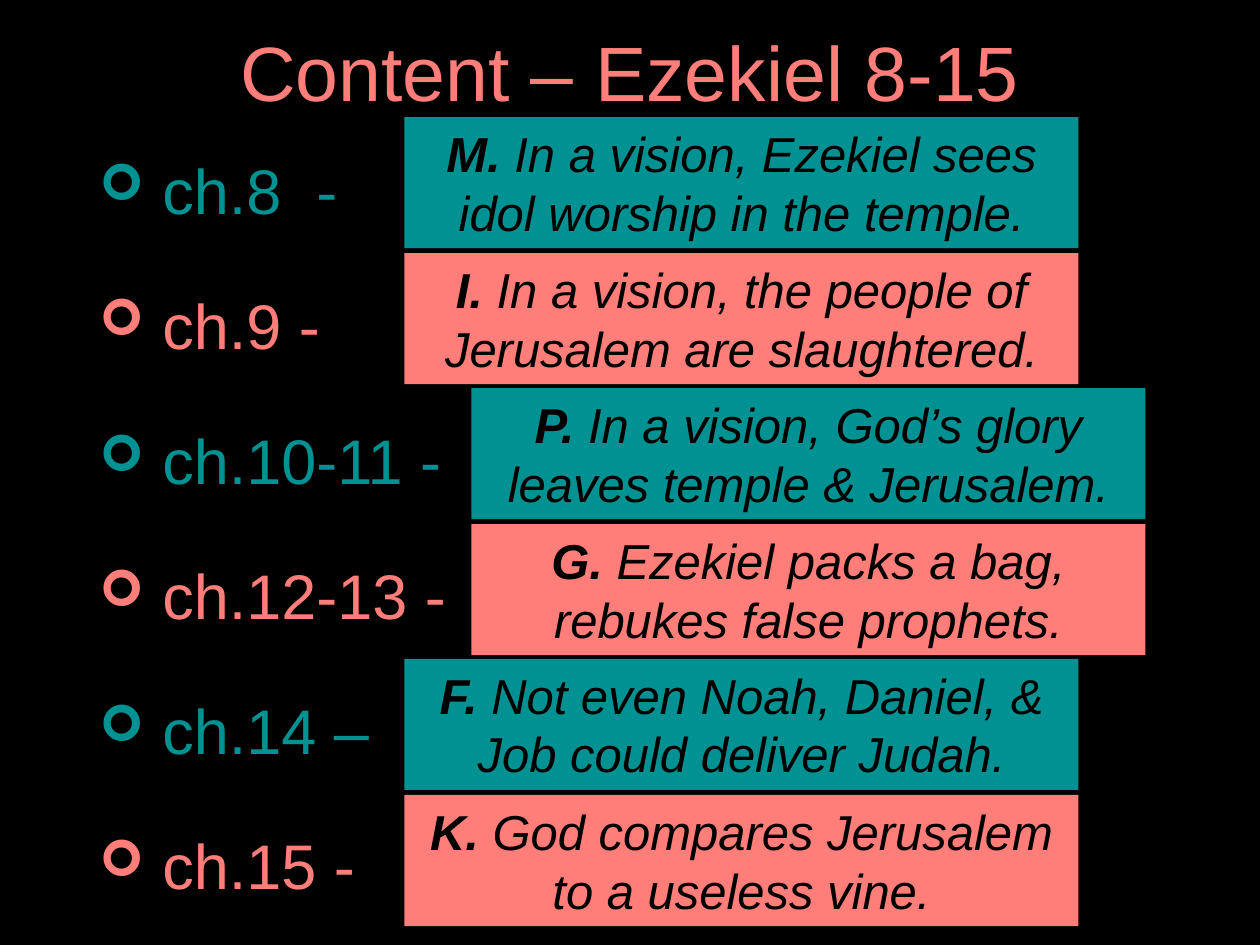
from lxml import etree
from pptx import Presentation
from pptx import util as u
from pptx.dml.color import RGBColor
from pptx.enum import shapes, text
from pptx.oxml.ns import qn

PX = 9144  # EMU per px, 100 px to the inch
BLACK = RGBColor(0x00, 0x00, 0x00)
TEAL = RGBColor(0x00, 0x91, 0x93)
CORAL = RGBColor(0xFF, 0x7E, 0x79)

CHAPTERS = [
    ("ch.8  -", "M. ", "In a vision, Ezekiel sees idol worship in the temple.", 321),
    ("ch.9 -", "I. ", "In a vision, the people of Jerusalem are slaughtered.", 321),
    ("ch.10-11 -", "P. ", "In a vision, God’s glory leaves temple & Jerusalem.", 374),
    ("ch.12-13 -", "G. ", "Ezekiel packs a bag, rebukes false prophets.", 374),
    ("ch.14 –", "F. ", "Not even Noah, Daniel, & Job could deliver Judah.", 321),
    ("ch.15 -", "K. ", "God compares Jerusalem to a useless vine.", 321),
]


def px(*lengths):
    return [u.Emu(length * PX) for length in lengths]


def style(paragraph, size, color):
    paragraph.font.name = "Arial"
    paragraph.font.size = u.Pt(size)
    paragraph.font.color.rgb = color


presentation = Presentation()
presentation.slide_width, presentation.slide_height = px(1000, 750)
slide = presentation.slides.add_slide(presentation.slide_layouts[6])
slide.background.fill.solid()
slide.background.fill.fore_color.rgb = BLACK

# Title
title = slide.shapes.add_textbox(*px(69, 16, 862, 90)).text_frame
title.word_wrap = True
title.vertical_anchor = text.MSO_ANCHOR.MIDDLE
paragraph = title.paragraphs[0]
paragraph.text = "Content – Ezekiel 8-15"
paragraph.alignment = text.PP_ALIGN.CENTER
paragraph.line_spacing = 0.9
style(paragraph, 44, CORAL)

# Chapter list
chapter_list = slide.shapes.add_textbox(*px(69, 115, 862, 611)).text_frame
chapter_list.word_wrap = True
for index, (chapter, *_) in enumerate(CHAPTERS):
    paragraph = chapter_list.paragraphs[0] if index == 0 else chapter_list.add_paragraph()
    paragraph.text = chapter
    if index:
        paragraph.space_before = u.Pt(4)
    paragraph.space_after = u.Pt(30)
    properties = paragraph._p.get_or_add_pPr()
    properties.set("marL", str(50 * PX))
    properties.set("indent", str(-50 * PX))
    etree.SubElement(properties, qn("a:buSzPct"), val="80000")
    etree.SubElement(properties, qn("a:buFont"), typeface="Wingdings")
    etree.SubElement(properties, qn("a:buChar"), char="➢")
    style(paragraph, 36, CORAL if index % 2 else TEAL)

# Summary boxes, evenly stepped down the slide
for index, (_, letter, summary, left) in enumerate(CHAPTERS):
    top = 93 + round(index * 107.6)
    box = slide.shapes.add_shape(shapes.MSO_SHAPE.RECTANGLE, *px(left, top, 535, 104))
    box.shadow.inherit = False
    box.fill.solid()
    box.fill.fore_color.rgb = CORAL if index % 2 else TEAL
    box.line.fill.background()
    frame = box.text_frame
    frame.word_wrap = True
    frame.vertical_anchor = text.MSO_ANCHOR.TOP
    paragraph = frame.paragraphs[0]
    paragraph.alignment = text.PP_ALIGN.CENTER
    style(paragraph, 28, BLACK)
    paragraph.font.italic = True
    letter_run = paragraph.add_run()
    letter_run.text = letter
    letter_run.font.bold = True
    paragraph.add_run().text = summary

presentation.save("out.pptx")
